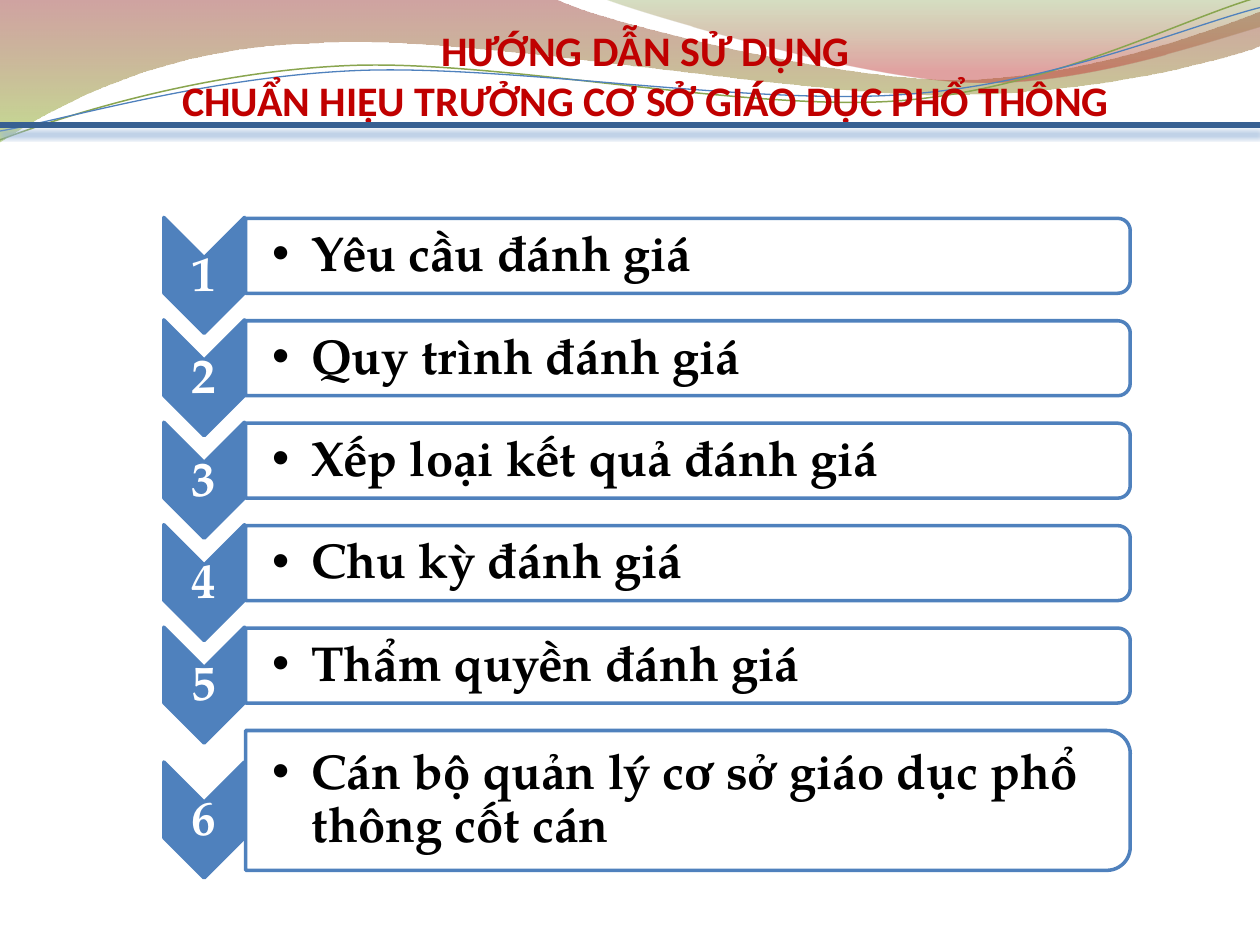
from dataclasses import dataclass
from math import cos, radians, sin

from lxml.etree import SubElement
from pptx import Presentation
from pptx.dml.color import RGBColor
from pptx.enum.shapes import MSO_CONNECTOR as Line, MSO_SHAPE as Shape
from pptx.enum.text import MSO_ANCHOR as Anchor, PP_ALIGN as Align
from pptx.oxml.ns import qn
from pptx.util import Inches, Pt


@dataclass(frozen=True)
class Theme:
    white: str = "FFFFFF"
    black: str = "000000"
    blue: str = "4F81BD"
    rule: str = "376092"
    rule_shadow: str = "95B3D7"
    title: str = "C00000"
    green_line: str = "89A54F"
    title_font: str = "Calibri"
    list_font: str = "TeX Gyre Pagella"
    bullet_font: str = "Arial"
    title_size: int = 24
    list_size: int = 28


@dataclass(frozen=True)
class Stop:
    position: float
    color: str
    opacity: int


@dataclass(frozen=True)
class Wave:
    """Segments hold grid points: one for a line, three for a curve."""
    start: tuple
    segments: tuple
    stops: tuple = ()
    line: str = ""
    width: float = 0
    rotation: float = 0
    pivot: tuple = (0, 0)


@dataclass(frozen=True)
class Item:
    text: str
    rows: float = 5.95
    text_rows: float = 5.4
    align: Align = Align.LEFT


T = Theme()
COLS, ROWS = 100, 75  # ten grid cells to the inch
PITCH = 8.13  # distance between list items
BODY_X, CHEVRON_X, FIRST_Y = 54.6, 16.2, 20.3

BANDS = (
    Wave((0, 0), (
        ((44, -0.1),),
        ((47.6, 1.7), (66.4, 6.3), (75.8, 6.3)),
        ((85.3, 6.3), (95.8, 2.6), (100, 0.9)),
        ((100.1, 3.6),),
        ((98.3, 4.4), (87, 7.6), (74.6, 7.5)),
        ((62.2, 7.5), (38.2, 2.8), (25.7, 3.4)),
        ((12.9, 3.6), (4.6, 8.3), (-0.1, 11.3)),
    ), stops=(Stop(0, "973330", 45), Stop(1, "95C238", 55))),
    Wave((47.9, -0.1), (
        ((50.9, 1.1), (68.2, 6.2), (76.9, 6.5)),
        ((85.6, 6.9), (96.1, 3.2), (100, 2.1)),
        ((100, 0),),
    ), stops=(Stop(0, "769537", 30), Stop(0.8, "BE3330", 45))),
)

STRANDS = (
    Wave((0, 11.1), (
        ((4.8, 9.3), (15.8, 5.7), (27.7, 5.2)),
        ((39.5, 4.7), (59.3, 8.9), (71.3, 8)),
        ((83.3, 7.1), (93.8, 1.5), (99.8, -0.2)),
    ), line=T.green_line, width=0.85, rotation=357.3, pivot=(49.9, 5.75)),
    Wave((0, 10.4), (
        ((4.7, 9.6), (16.4, 6.1), (28.3, 5.6)),
        ((40.3, 5.1), (59.7, 8.4), (71.7, 7.5)),
        ((83.6, 6.7), (94.1, 2.1), (100, 0.6)),
    ), line=T.blue, width=0.75, rotation=357.3, pivot=(49.95, 5.9)),
)

ITEMS = (
    Item("Yêu cầu đánh giá"),
    Item("Quy trình đánh giá"),
    Item("Xếp loại kết quả đánh giá"),
    Item("Chu kỳ đánh giá"),
    Item("Thẩm quyền đánh giá", align=Align.JUSTIFY),
    Item("Cán bộ quản lý cơ sở giáo dục phổ thông cốt cán", 11.1, 10.1),
)


def g(cells: float) -> int:
    return Inches(cells / 10)


def rgb(color: str) -> RGBColor:
    return RGBColor.from_string(color)


def set_opacity(fill, percents: list) -> None:
    for color, percent in zip(fill.iter(qn("a:srgbClr")), percents):
        SubElement(color, qn("a:alpha"), val=str(percent * 1000))


def turn(point: tuple, pivot: tuple, degrees: float) -> tuple:
    dx, dy, a = point[0] - pivot[0], point[1] - pivot[1], radians(degrees)
    return pivot[0] + dx * cos(a) - dy * sin(a), pivot[1] + dx * sin(a) + dy * cos(a)


def bend(sp, segments: tuple) -> None:
    """Join each run of three line points into one cubic curve."""
    steps = iter(list(sp._element.iter(qn("a:lnTo"))))
    for seg in segments:
        parts = [next(steps) for _ in seg]
        if len(parts) == 3:
            curve = SubElement(parts[0].getparent(), qn("a:cubicBezTo"))
            parts[0].addprevious(curve)
            for part in parts:
                curve.append(part[0])
                part.getparent().remove(part)


def add_wave(shapes, wave: Wave) -> None:
    points = [wave.start, *(p for seg in wave.segments for p in seg)]
    level = [turn(p, wave.pivot, -wave.rotation) for p in points]
    start, *rest = [(g(x), g(y)) for x, y in level]
    builder = shapes.build_freeform(*start)
    builder.add_line_segments(rest, close=bool(wave.stops))
    sp = builder.convert_to_shape()
    bend(sp, wave.segments)
    sp.shadow.inherit = False
    sp.rotation = wave.rotation
    if wave.stops:
        sp.line.fill.background()
        sp.fill.gradient()
        sp.fill.gradient_angle = 270
        for stop, want in zip(sp.fill.gradient_stops, wave.stops):
            stop.position, stop.color.rgb = want.position, rgb(want.color)
        set_opacity(sp._element.spPr.find(qn("a:gradFill")), [x.opacity for x in wave.stops])
    else:
        sp.fill.background()
        sp.line.color.rgb, sp.line.width = rgb(wave.line), Pt(wave.width)


def add_text(shapes, text: str, x: float, y: float, w: float, h: float, *,
             font: str, size: int, color: str, align: Align = Align.CENTER,
             anchor: Anchor = Anchor.MIDDLE, insets: tuple = (0.2,) * 4,
             spacing: float = 0.9, bullet: bool = False) -> None:
    tf = shapes.add_textbox(g(x), g(y), g(w), g(h)).text_frame
    tf.word_wrap, tf.vertical_anchor = True, anchor
    tf.margin_left, tf.margin_top, tf.margin_right, tf.margin_bottom = map(g, insets)
    p = tf.paragraphs[0]
    p.alignment, p.line_spacing = align, spacing
    for i, part in enumerate(text.split("\n")):
        if i:
            p.add_line_break()
        r = p.add_run()
        r.text = part
        r.font.name, r.font.size, r.font.bold = font, Pt(size), True
        r.font.color.rgb = rgb(color)
    if bullet:
        p.level = 1
        pPr = p._p.get_or_add_pPr()
        pPr.set("marL", str(g(3.1)))
        pPr.set("indent", str(-g(3.1)))
        SubElement(pPr, qn("a:buFont"), typeface=T.bullet_font)
        SubElement(pPr, qn("a:buChar"), char="•")


def add_turned(shapes, kind: Shape, cx: float, cy: float, w: float, h: float, fill: str):
    sp = shapes.add_shape(kind, g(cx - w / 2), g(cy - h / 2), g(w), g(h))
    sp.rotation, sp.shadow.inherit = 90, False
    sp.fill.solid()
    sp.fill.fore_color.rgb = rgb(fill)
    sp.line.color.rgb, sp.line.width = rgb(T.blue), Pt(2)
    return sp


def add_item(shapes, number: int, item: Item, cy: float) -> None:
    style = dict(font=T.list_font, size=T.list_size)
    mark_y = cy + 1.55
    add_turned(shapes, Shape.CHEVRON, CHEVRON_X, mark_y, 9.2, 6.4, T.blue)
    add_text(shapes, str(number), CHEVRON_X - 3.2, mark_y - 1.35, 6.4, 2.7,
             color=T.white, **style)
    body = add_turned(shapes, Shape.ROUND_2_SAME_RECTANGLE, BODY_X, cy, item.rows, 70.2, T.white)
    set_opacity(body._element.spPr.find(qn("a:solidFill")), [90])
    add_text(shapes, item.text, 19.4, cy - item.text_rows / 2, 69.8, item.text_rows,
             color=T.black, align=item.align, insets=(2.2, 0.2, 0.2, 0.2), bullet=True, **style)


def add_rule(shapes, y: float) -> None:
    line = shapes.add_connector(Line.STRAIGHT, 0, g(y), g(COLS), g(y))
    line.line.color.rgb, line.line.width = rgb(T.rule), Pt(3)
    effects = SubElement(line._element.spPr, qn("a:effectLst"))
    shadow = SubElement(effects, qn("a:outerShdw"), blurRad=str(Pt(4)), dist=str(Pt(4)),
                        dir="5400000", rotWithShape="0")
    SubElement(shadow, qn("a:srgbClr"), val=T.rule_shadow)


def main() -> None:
    prs = Presentation()
    prs.slide_width, prs.slide_height = g(COLS), g(ROWS)
    s = prs.slides.add_slide(prs.slide_layouts[6])
    # Waves behind the heading
    for band in BANDS:
        add_wave(s.shapes, band)
    strands = s.shapes.add_group_shape().shapes
    for strand in STRANDS:
        add_wave(strands, strand)
    # Heading and rule
    add_text(s.shapes, "HƯỚNG DẪN SỬ DỤNG\nCHUẨN HIỆU TRƯỞNG CƠ SỞ GIÁO DỤC PHỔ THÔNG",
             11.6, 1.25, 79.3, 8.7, font=T.title_font, size=T.title_size, color=T.title,
             anchor=Anchor.BOTTOM, insets=(0, 0.5, 0, 0), spacing=1.0)
    add_rule(s.shapes, 9.93)
    # Numbered list: a taller item pushes its own centre down
    items = s.shapes.add_group_shape().shapes
    for i, item in enumerate(ITEMS):
        extra = (item.rows - ITEMS[0].rows) / 2
        add_item(items, i + 1, item, FIRST_Y + i * PITCH + extra)
    prs.save("out.pptx")


if __name__ == "__main__":
    main()
